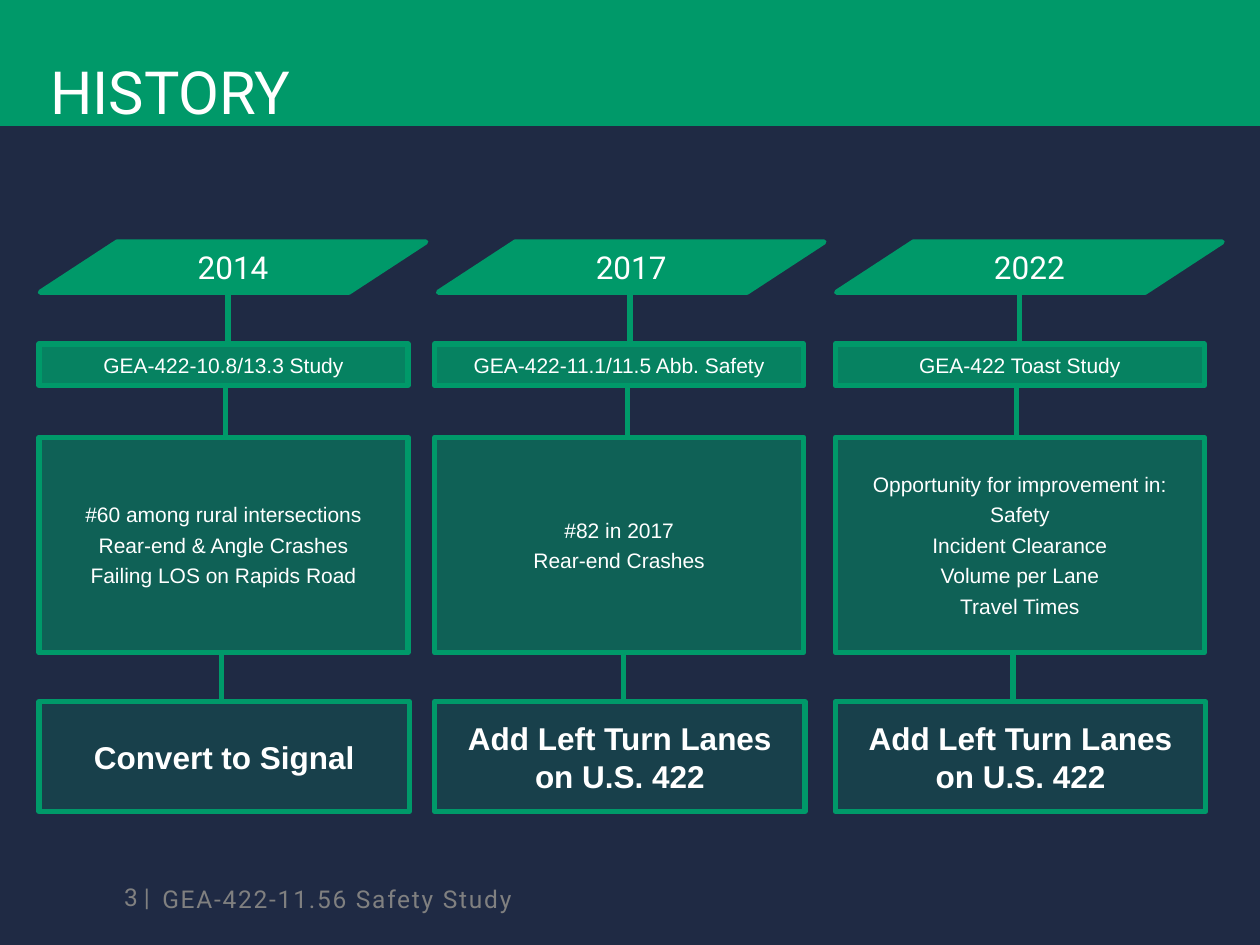
"""Build the project history slide with three study columns."""
from dataclasses import dataclass

from lxml import etree
from pptx import Presentation
from pptx.dml.color import RGBColor
from pptx.enum.shapes import MSO_CONNECTOR, MSO_SHAPE
from pptx.enum.text import MSO_ANCHOR, PP_ALIGN
from pptx.oxml.ns import qn
from pptx.util import Inches, Pt

RECT = MSO_SHAPE.RECTANGLE
SLANT = MSO_SHAPE.FLOWCHART_DATA
STRAIGHT = MSO_CONNECTOR.STRAIGHT
MIDDLE = MSO_ANCHOR.MIDDLE
BOTTOM = MSO_ANCHOR.BOTTOM
LEFT = PP_ALIGN.LEFT
CENTER = PP_ALIGN.CENTER
RIGHT = PP_ALIGN.RIGHT


@dataclass(frozen=True)
class Theme:
    """Colours, fonts and type sizes of the deck."""
    navy: RGBColor = RGBColor(0x1F, 0x2A, 0x44)
    green: RGBColor = RGBColor(0x00, 0x99, 0x69)
    white: RGBColor = RGBColor(0xFF, 0xFF, 0xFF)
    gray: RGBColor = RGBColor(0x80, 0x80, 0x80)
    head: str = "Roboto"
    body: str = "Arial"
    title: int = 34
    large: int = 18
    foot: int = 14
    small: int = 12
    rule: int = 3
    gap: int = 3


class Deck:
    """Hold the theme and the current slide."""

    def __init__(self, theme, slide):
        """Keep the style and paint the background."""
        self.theme = theme
        self.slide = slide
        fill = slide.background.fill
        fill.solid()
        fill.fore_color.rgb = theme.navy

    def text(self, frame, lines, size, font, color, align, bold=False, track=0):
        """Add one paragraph for each line."""
        for i, line in enumerate(lines):
            para = frame.paragraphs[0] if i == 0 else frame.add_paragraph()
            para.alignment = align
            if i:
                para.space_before = Pt(self.theme.gap)
            run = para.add_run()
            run.text = line
            run.font.size = Pt(size)
            run.font.name = font
            run.font.bold = bold
            run.font.color.rgb = color
            if track:
                run.font._element.set("spc", str(track))

    def shape(self, kind, box, alpha=100):
        """Add a green shape with the given opacity in percent."""
        item = self.slide.shapes.add_shape(kind, *map(Inches, box))
        item.shadow.inherit = False
        item.fill.solid()
        item.fill.fore_color.rgb = self.theme.green
        if alpha < 100:
            tint = item._element.spPr.find(qn("a:solidFill"))[0]
            etree.SubElement(tint, qn("a:alpha")).set("val", str(alpha * 1000))
        item.text_frame.word_wrap = True
        return item

    def title(self, text):
        """Add the title band across the top."""
        band = self.shape(RECT, (0, 0, 10, 1))
        band.line.fill.background()
        frame = band.text_frame
        frame.vertical_anchor = BOTTOM
        frame.margin_left = frame.margin_right = Inches(0.4)
        frame.margin_top, frame.margin_bottom = Inches(0.1), 0
        look = self.theme
        self.text(frame, [text], look.title, look.head, look.white, LEFT)

    def card(self, kind, box, lines, size, font, alpha=100, bold=False):
        """Add an outlined shape with centred text."""
        item = self.shape(kind, box, alpha)
        item.line.color.rgb = self.theme.green
        item.line.width = Pt(self.theme.rule)
        etree.SubElement(item._element.spPr.find(qn("a:ln")), qn("a:round"))
        item.text_frame.vertical_anchor = MIDDLE
        self.text(item.text_frame, lines, size, font, self.theme.white, CENTER, bold)

    def stem(self, x, top, end):
        """Add a vertical line between two boxes."""
        line = self.slide.shapes.add_connector(
            STRAIGHT, *map(Inches, (x, end, x, top)))
        line.line.color.rgb = self.theme.green
        line.line.width = Pt(self.theme.rule)
        etree.SubElement(line._element.spPr, qn("a:effectLst"))

    def label(self, box, text, align, inset=True, track=0):
        """Add a gray footer label."""
        frame = self.slide.shapes.add_textbox(*map(Inches, box)).text_frame
        frame.word_wrap = inset
        frame.vertical_anchor = MIDDLE
        if not inset:
            frame.margin_left = frame.margin_right = 0
            frame.margin_top = frame.margin_bottom = 0
        look = self.theme
        self.text(frame, [text], look.foot, look.head, look.gray, align, track=track)


LANES = "Add Left Turn Lanes on U.S. 422"
COLUMNS = [
    (0.31, 1.81, "2014", "GEA-422-10.8/13.3 Study",
     ["#60 among rural intersections", "Rear-end & Angle Crashes",
      "Failing LOS on Rapids Road"], "Convert to Signal"),
    (3.45, 5, "2017", "GEA-422-11.1/11.5 Abb. Safety",
     ["#82 in 2017", "Rear-end Crashes"], LANES),
    (6.63, 8.09, "2022", "GEA-422 Toast Study",
     ["Opportunity for improvement in:", "Safety", "Incident Clearance",
      "Volume per Lane", "Travel Times"], LANES),
]
STEMS = [(0, 2.32, 2.73), (0.02, 3.05, 3.45), (0.05, 5.18, 5.58)]
START, PITCH = 0.32, 3.16


def main():
    """Build and save the slide."""
    show = Presentation()
    show.slide_width, show.slide_height = Inches(10), Inches(7.5)
    look = Theme()
    deck = Deck(look, show.slides.add_slide(show.slide_layouts[6]))
    deck.label((0.8, 6.92, 0.39, 0.4), "3 |", RIGHT, inset=False)
    deck.title("HISTORY")
    deck.label((1.19, 6.93, 6.06, 0.4), "GEA-422-11.56 Safety Study", LEFT, track=100)
    for i, (left, mid, year, study, facts, fix) in enumerate(COLUMNS):
        deck.card(SLANT, (START + PITCH * i, 1.92, 3.06, 0.4), [year],
                  look.large, look.head)
        deck.card(RECT, (left, 2.73, 2.93, 0.33), [study],
                  look.small, look.body, 80)
        deck.card(RECT, (left, 3.47, 2.93, 1.71), facts,
                  look.small, look.body, 50)
        deck.card(RECT, (left, 5.57, 2.94, 0.87), [fix],
                  look.large, look.body, 20, bold=True)
        for shift, top, end in STEMS:
            deck.stem(mid - shift, top, end)
    show.save("out.pptx")


if __name__ == "__main__":
    main()
